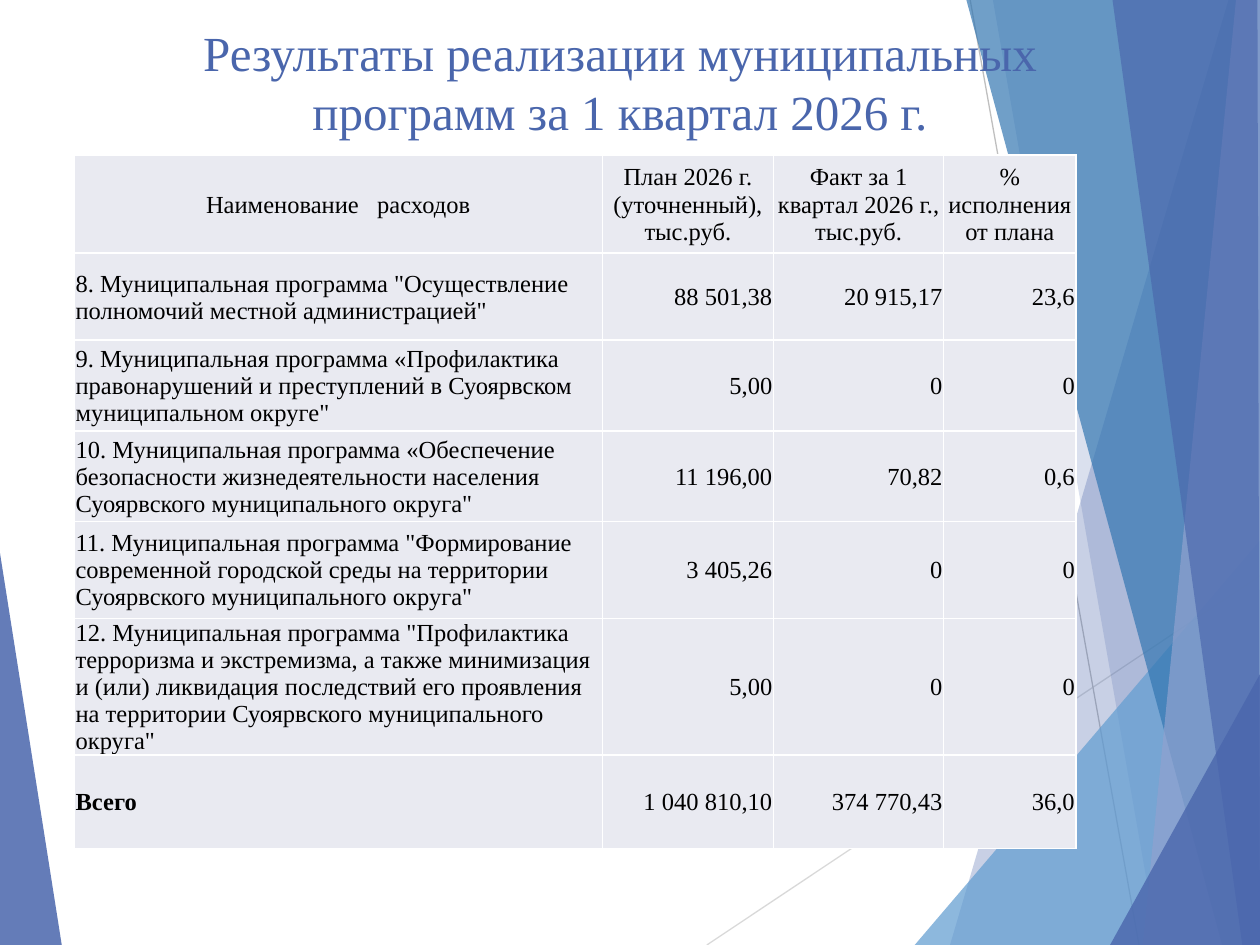
import pptx
import pptx.dml.color
import pptx.enum.text
import pptx.oxml
import pptx.oxml.ns
import pptx.util
from pptx.enum.shapes import MSO_CONNECTOR
from lxml import etree

WIDTH, HEIGHT = 10, 7.5
FONT = "Times New Roman"
BLUE, CELL, WHITE, BLACK = "4A66AC", "E9EAF1", "FFFFFF", "000000"
ALIGN = pptx.enum.text.PP_ALIGN
ANCHOR = pptx.enum.text.MSO_ANCHOR

TITLE = "Результаты реализации муниципальных\vпрограмм за 1 квартал 2026 г."

# Background: fill, opacity in percent, corners in inches
LEFT_FACET = (BLUE, 85, [(0, 4.39), (0.49, HEIGHT), (0, HEIGHT)])
RIGHT_FACETS = [
    (BLUE, 30, [(9.75, 0), (7.54, HEIGHT), (WIDTH, HEIGHT), (WIDTH, 0)]),
    (BLUE, 20, [(7.88, 0), (9.19, HEIGHT), (WIDTH, HEIGHT), (WIDTH, 0)]),
    ("629DD1", 72, [(7.26, HEIGHT), (WIDTH, 4.29), (WIDTH, HEIGHT)]),
    ("3477B2", 70, [(7.67, 0), (9.7, HEIGHT), (WIDTH, HEIGHT), (WIDTH, 0)]),
    ("90A2CF", 70, [(9.81, 0), (9.07, HEIGHT), (WIDTH, HEIGHT), (WIDTH, 0)]),
    (BLUE, 65, [(8.83, 0), (9.86, HEIGHT), (WIDTH, HEIGHT), (9.98, 0)]),
    (BLUE, 80, [(8.81, HEIGHT), (WIDTH, 5.35), (WIDTH, HEIGHT)]),
]
RAYS = [((5.61, HEIGHT), (WIDTH, 4.57), "D9D9D9"), ((7.7, 0), (9.04, HEIGHT), "BFBFBF")]

# Table: size of the grid and the wording, one paragraph per line
COLUMNS = [4.19, 1.36, 1.35, 1.05]
ROWS = [0.78, 0.69, 0.72, 0.72, 0.77, 1, 0.74]
SPENDING = [
    ("Наименование   расходов", "План 2026 г.\n(уточненный),\nтыс.руб.",
     "Факт за 1 квартал 2026 г.,\nтыс.руб.", "% исполнения от плана"),
    ('8. Муниципальная программа "Осуществление полномочий местной администрацией"',
     "88 501,38", "20 915,17", "23,6"),
    ("9. Муниципальная программа «Профилактика правонарушений и преступлений "
     'в Суоярвском муниципальном округе"', "5,00", "0", "0"),
    ("10. Муниципальная программа «Обеспечение безопасности жизнедеятельности "
     'населения Суоярвского муниципального округа"', "11 196,00", "70,82", "0,6"),
    ('11. Муниципальная программа "Формирование современной городской среды '
     'на территории Суоярвского муниципального округа"', "3 405,26", "0", "0"),
    ('12. Муниципальная программа "Профилактика терроризма и экстремизма, а также '
     "минимизация и (или) ликвидация последствий его проявления на территории "
     'Суоярвского муниципального округа"', "5,00", "0", "0"),
    ("Всего", "1 040 810,10", "374 770,43", "36,0"),
]


def inch(value):
    return pptx.util.Inches(value)


def colour(code):
    return pptx.dml.color.RGBColor.from_string(code)


def apply(target, values):
    for name, value in values.items():
        setattr(target, name, value)


def format_text(frame, size, code, align, bold=False):
    for para in frame.paragraphs:
        para.alignment = align
        apply(para.font, {"name": FONT, "size": pptx.util.Pt(size), "bold": bold})
        para.font.color.rgb = colour(code)


def add_facet(page, code, opacity, corners):
    # The builder rounds to whole units, so corners go in as hundredths of an inch
    start, *others = [(round(x * 100), round(y * 100)) for x, y in corners]
    builder = page.shapes.build_freeform(*start, scale=inch(0.01))
    builder.add_line_segments(others, close=True)
    facet = builder.convert_to_shape()
    facet.shadow.inherit = False
    facet.fill.solid()
    facet.fill.fore_color.rgb = colour(code)
    facet.line.fill.background()
    tone = facet.element.spPr.find(".//" + pptx.oxml.ns.qn("a:srgbClr"))
    etree.SubElement(tone, pptx.oxml.ns.qn("a:alpha"), val=str(opacity * 1000))


def add_ray(page, start, end, code):
    ends = [inch(value) for value in start + end]
    ray = page.shapes.add_connector(MSO_CONNECTOR.STRAIGHT, *ends)
    ray.line.width = pptx.util.Pt(0.75)
    ray.line.color.rgb = colour(code)
    etree.SubElement(ray.element.spPr, pptx.oxml.ns.qn("a:effectLst"))


def add_borders(cell, code, width):
    properties = cell._tc.get_or_add_tcPr()
    for side in ("lnL", "lnR", "lnT", "lnB"):
        properties.append(pptx.oxml.parse_xml(
            f'<a:{side} {pptx.oxml.ns.nsdecls("a")} w="{pptx.util.Pt(width)}">'
            f'<a:solidFill><a:srgbClr val="{code}"/></a:solidFill></a:{side}>'))


def add_spending_table(page):
    frame = page.shapes.add_table(len(ROWS), len(COLUMNS), inch(0.59), inch(1.23),
                                  inch(sum(COLUMNS)), inch(sum(ROWS)))
    table = frame.table
    for column, width in zip(table.columns, COLUMNS):
        column.width = inch(width)
    for row, height in zip(table.rows, ROWS):
        row.height = inch(height)
    margins = {"margin_left": inch(0.01), "margin_right": inch(0.01),
               "margin_top": inch(0.01), "margin_bottom": 0}
    for r, texts in enumerate(SPENDING):
        for c, text in enumerate(texts):
            cell = table.cell(r, c)
            cell.text = text
            apply(cell, {**margins, "vertical_anchor": ANCHOR.MIDDLE})
            add_borders(cell, WHITE, 1)
            cell.fill.solid()
            cell.fill.fore_color.rgb = colour(CELL)
            align = ALIGN.CENTER if r == 0 else ALIGN.RIGHT if c else ALIGN.LEFT
            format_text(cell.text_frame, 14, BLACK, align, bold=text == "Всего")


def place_title(page):
    title = page.shapes.title
    apply(title, {"left": inch(0.51), "top": inch(0.13),
                  "width": inch(8.82), "height": inch(0.52)})
    frame = title.text_frame
    frame.text = TITLE
    apply(frame, {"word_wrap": True, "vertical_anchor": ANCHOR.TOP,
                  "auto_size": pptx.enum.text.MSO_AUTO_SIZE.NONE})
    format_text(frame, 28, BLUE, ALIGN.CENTER)
    # Bring the title in front of the facets
    title.element.getparent().append(title.element)


def main():
    deck = pptx.Presentation()
    apply(deck, {"slide_width": inch(WIDTH), "slide_height": inch(HEIGHT)})
    page = deck.slides.add_slide(deck.slide_layouts[5])
    add_facet(page, *LEFT_FACET)
    for ray in RAYS:
        add_ray(page, *ray)
    for facet in RIGHT_FACETS:
        add_facet(page, *facet)
    add_spending_table(page)
    place_title(page)
    deck.save("out.pptx")


if __name__ == "__main__":
    main()
